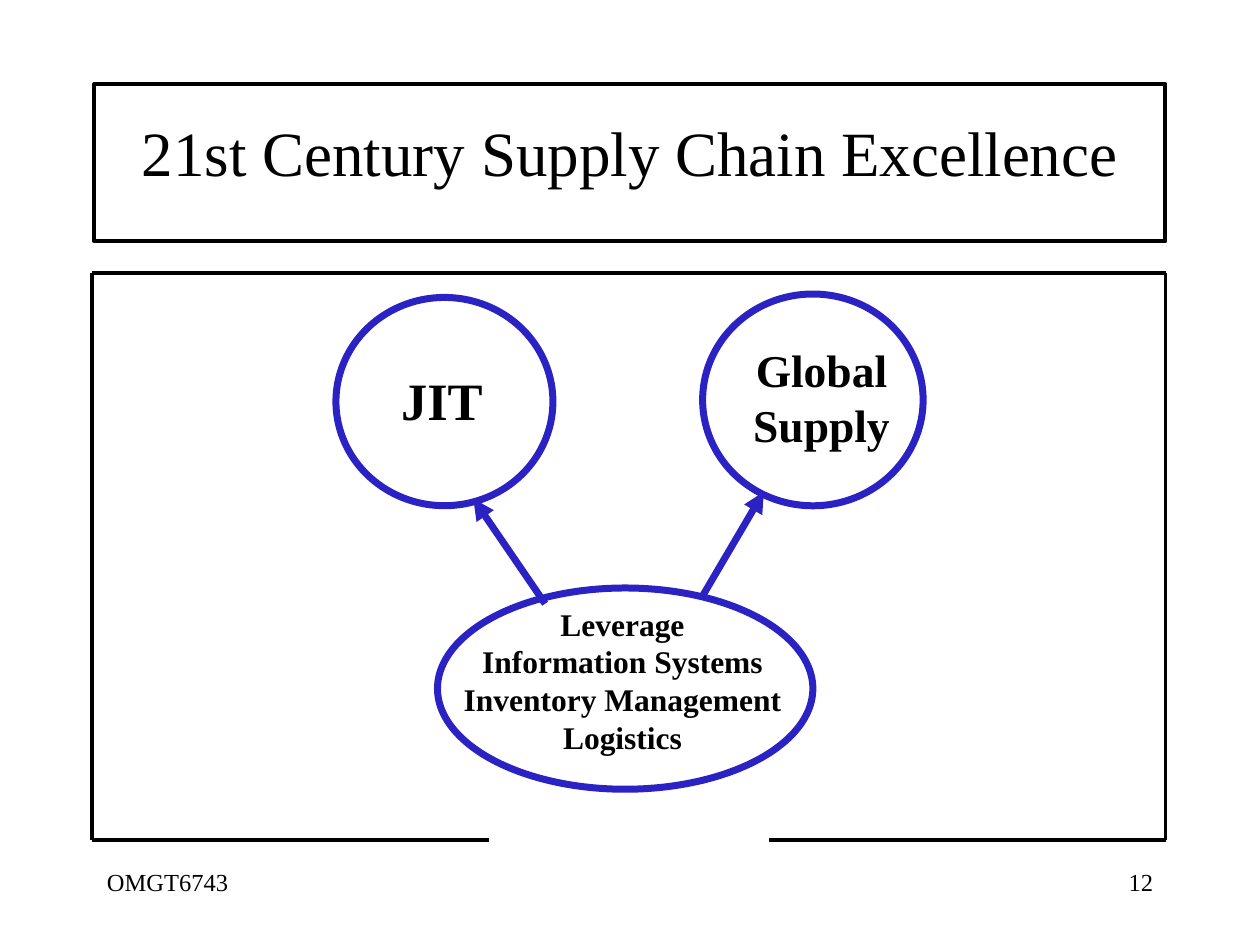
from pptx import Presentation
from pptx.dml.color import RGBColor
from pptx.enum.shapes import MSO_CONNECTOR as Connector, MSO_SHAPE as Shape
from pptx.enum.text import MSO_ANCHOR as Anchor, PP_ALIGN as Align
from pptx.oxml.ns import qn
from pptx.util import Pt
from lxml.etree import SubElement

BLACK = RGBColor(0x00, 0x00, 0x00)
BLUE = RGBColor(0x2B, 0x22, 0xC4)
FONT = "Times New Roman"


def write(box, text, size, align=Align.LEFT, bold=False, wrap=True):
    frame = box.text_frame
    frame.word_wrap = wrap
    frame.text = text
    for para in frame.paragraphs:
        para.alignment = align
        font = para.font
        font.name, font.size, font.bold = FONT, Pt(size), bold
        font.color.rgb = BLACK


def draw_line(start, end, color, width, arrow=False):
    line = page.shapes.add_connector(
        Connector.STRAIGHT, *[Pt(value) for value in (*start, *end)])
    line.line.color.rgb = color
    line.line.width = Pt(width)
    if arrow:
        SubElement(line.line._get_or_add_ln(), qn("a:tailEnd"), type="triangle")
    SubElement(line._element.spPr, qn("a:effectLst"))


deck = Presentation()
deck.slide_width, deck.slide_height = Pt(720), Pt(540)
page = deck.slides.add_slide(deck.slide_layouts[5])

# Content frame, open at the bottom centre
left, right, top, bottom = 52.5, 666, 156, 480
for start, end in [
    ((left, top), (right, top)),
    ((left, top), (left, bottom)),
    ((right, top), (right, bottom)),
    ((left, bottom), (279.5, bottom)),
    ((439.5, bottom), (right, bottom)),
]:
    draw_line(start, end, BLACK, 2)

# Title and its border
border = page.shapes.add_shape(Shape.RECTANGLE, Pt(54), Pt(48), Pt(612), Pt(90))
border.shadow.inherit = False
border.fill.background()
border.line.color.rgb = BLACK
border.line.width = Pt(2.25)

title = page.shapes.title
title.left, title.top, title.width, title.height = Pt(12), Pt(21.6), Pt(696), Pt(86.4)
frame = title.text_frame
frame.margin_left = frame.margin_right = frame.margin_top = frame.margin_bottom = 0
frame.vertical_anchor = Anchor.BOTTOM
write(title, "21st Century Supply Chain Excellence", 36, Align.CENTER)

# Labels, wide enough to hold each line whole
for text, size, x, y, width, height in [
    ("JIT", 30, 220, 206.5, 65, 43),
    ("Global\nSupply", 26, 419.5, 192, 100, 70),
    ("Leverage\nInformation Systems\nInventory Management\nLogistics",
     18, 253, 342, 205.5, 119.5),
]:
    box = page.shapes.add_textbox(Pt(x), Pt(y), Pt(width), Pt(height))
    write(box, text, size, Align.CENTER, bold=True, wrap=False)

# Ellipses
for x, y, width, height in [
    (192, 170, 124, 119),
    (401.5, 168, 126, 121),
    (250, 336, 214.5, 115),
]:
    ellipse = page.shapes.add_shape(Shape.OVAL, Pt(x), Pt(y), Pt(width), Pt(height))
    ellipse.shadow.inherit = False
    ellipse.fill.background()
    ellipse.line.color.rgb = BLUE
    ellipse.line.width = Pt(4)

# Arrows from the base to both goals
draw_line((311.5, 345), (270.5, 285), BLUE, 4, arrow=True)
draw_line((401.5, 340.5), (436.5, 281), BLUE, 4, arrow=True)

# Footer
for text, x, align in [("OMGT6743", 54, Align.LEFT), ("12", 516, Align.RIGHT)]:
    box = page.shapes.add_textbox(Pt(x), Pt(492), Pt(150), Pt(36))
    write(box, text, 14, align)

deck.save("out.pptx")
